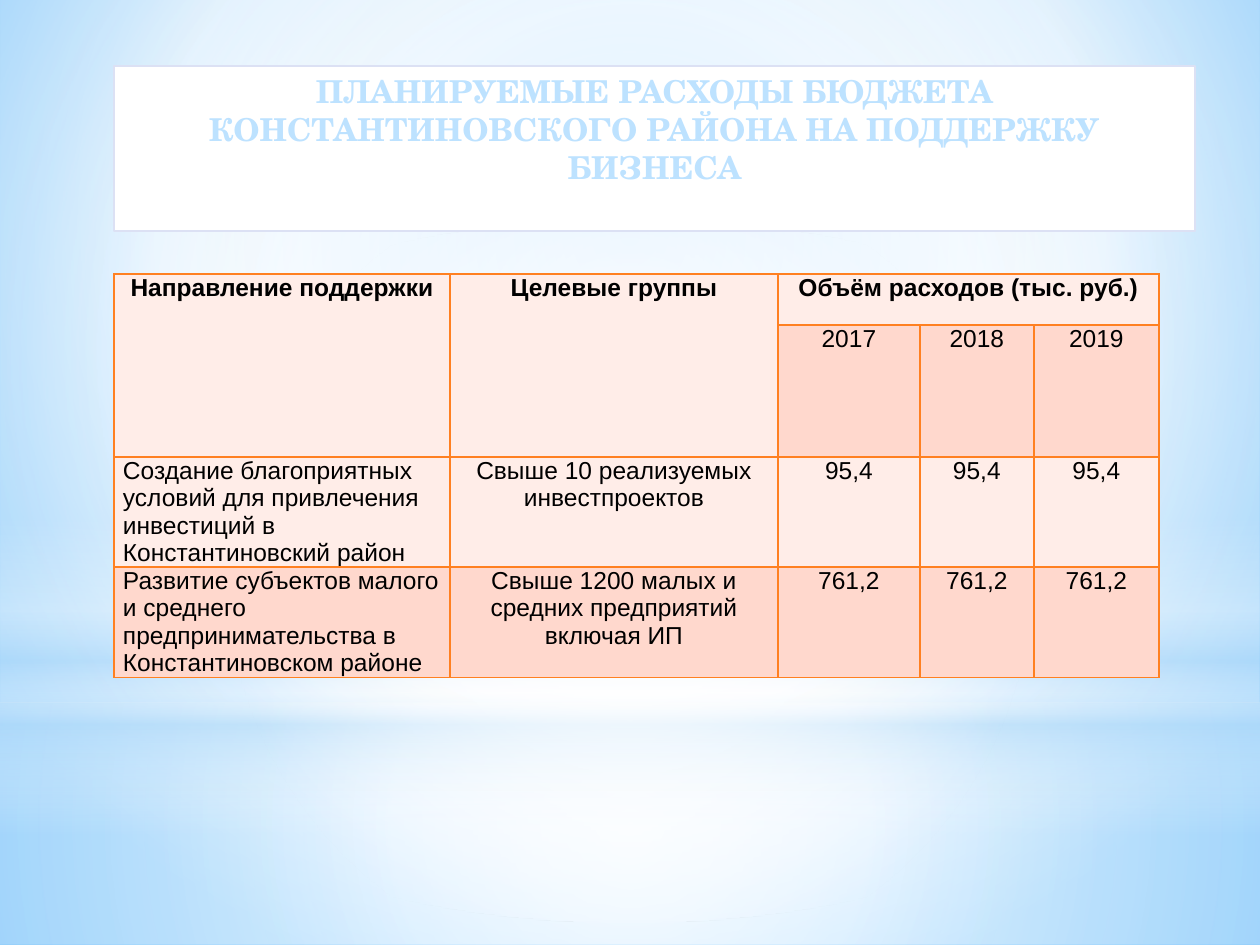
import pptx
import pptx.util
import pptx.dml.color
import pptx.enum.shapes
import pptx.enum.text
import pptx.oxml
import pptx.oxml.ns

RGB = pptx.dml.color.RGBColor
SHAPE = pptx.enum.shapes.MSO_SHAPE
ALIGN = pptx.enum.text.PP_ALIGN
qn = pptx.oxml.ns.qn
NS = pptx.oxml.ns.nsdecls("a")

PX = 914400 // 126

WHITE = RGB(0xFF, 0xFF, 0xFF)
BLACK = RGB(0x00, 0x00, 0x00)
SKY = RGB(0x9E, 0xD5, 0xFF)
DEEP_SKY = RGB(0x5B, 0xB9, 0xFF)
MIST = RGB(0xB4, 0xDC, 0xFA)
TITLE_BLUE = RGB(0xBD, 0xE2, 0xFF)
TITLE_OUTLINE = RGB(0x17, 0x20, 0x4F)
TITLE_FRAME = RGB(0xDC, 0xE1, 0xF4)
ORANGE = RGB(0xFF, 0x80, 0x21)
PALE_PINK = RGB(0xFF, 0xED, 0xE8)
PINK = RGB(0xFF, 0xD8, 0xCD)

CENTRE = (50, 50, 50, 50)
# Soft light layers: shape, box, stops (position, colour, opacity), focus or None
LAYERS = [
    (SHAPE.RECTANGLE, (0, 703, 1260, 242),
     [(0, WHITE, 91), (37, WHITE, 76), (100, MIST, 79)], CENTRE),
    (SHAPE.RECTANGLE, (0, 0, 1260, 703),
     [(0, WHITE, 89), (48, WHITE, 62), (100, MIST, 79)], CENTRE),
    (SHAPE.RECTANGLE, (0, 519, 1260, 315),
     [(0, WHITE, 0), (29, WHITE, 30), (45, MIST, 40), (55, WHITE, 26),
      (65, MIST, 60), (100, WHITE, 0)], None),
    (SHAPE.OVAL, (0, 220, 1260, 703),
     [(0, WHITE, 100), (56, WHITE, 0)], CENTRE),
]

TITLE = ("ПЛАНИРУЕМЫЕ РАСХОДЫ БЮДЖЕТА КОНСТАНТИНОВСКОГО РАЙОНА "
         "НА ПОДДЕРЖКУ БИЗНЕСА")
COLUMNS = [336, 328, 142, 114, 125]
ROW_HEIGHTS = [51, 132, 110, 110]
ROWS = [
    ["Направление поддержки", "Целевые группы", "Объём расходов (тыс. руб.)", "", ""],
    ["", "", "2017", "2018", "2019"],
    ["Создание благоприятных условий для привлечения инвестиций "
     "в Константиновский район",
     "Свыше 10 реализуемых инвестпроектов", "95,4", "95,4", "95,4"],
    ["Развитие субъектов малого и среднего предпринимательства "
     "в Константиновском районе",
     "Свыше 1200 малых и средних предприятий включая ИП",
     "761,2", "761,2", "761,2"],
]
MERGES = [((0, 0), (1, 0)), ((0, 1), (1, 1)), ((0, 2), (0, 4))]


def emu(*lengths):
    return [n * PX for n in lengths]


def set_attrs(target, values):
    for name, value in values.items():
        setattr(target, name, value)


def write(p, text, size, name, color, bold):
    r = p.add_run()
    r.text = text
    set_attrs(r.font, {"size": pptx.util.Pt(size), "name": name, "bold": bold})
    r.font.color.rgb = color
    return r


def line_xml(tag, color, width):
    return pptx.oxml.parse_xml(
        f'<a:{tag} {NS} w="{pptx.util.Pt(width)}"><a:solidFill>'
        f'<a:srgbClr val="{color}"/></a:solidFill></a:{tag}>')


def set_gradient(fill, properties, stops, focus):
    """Radial around the focus rectangle, or top to bottom without one."""
    fill.solid()
    gs = "".join(
        f'<a:gs pos="{pos * 1000}"><a:srgbClr val="{color}">'
        f'<a:alpha val="{opacity * 1000}"/></a:srgbClr></a:gs>'
        for pos, color, opacity in stops)
    if focus:
        sides = " ".join(f'{k}="{v * 1000}"' for k, v in zip("ltrb", focus))
        course = f'<a:path path="circle"><a:fillToRect {sides}/></a:path>'
    else:
        course = '<a:lin ang="5400000" scaled="0"/>'
    grad = pptx.oxml.parse_xml(
        f'<a:gradFill {NS} rotWithShape="1"><a:gsLst>{gs}</a:gsLst>{course}</a:gradFill>')
    properties.replace(properties.find(qn("a:solidFill")), grad)


def add_layer(s, kind, box, stops, focus):
    sp = s.shapes.add_shape(kind, *emu(*box))
    sp.shadow.inherit = False
    sp.line.fill.background()
    set_gradient(sp.fill, sp._element.spPr, stops, focus)


def format_cell(cell, text, fill, align, bold):
    set_attrs(cell, {"margin_left": emu(9)[0], "margin_right": emu(9)[0],
                     "margin_top": 0, "margin_bottom": 0})
    cell.fill.solid()
    cell.fill.fore_color.rgb = fill
    tcPr = cell._tc.get_or_add_tcPr()
    for i, side in enumerate(("lnL", "lnR", "lnT", "lnB")):
        tcPr.insert(i, line_xml(side, ORANGE, 1))
    p = cell.text_frame.paragraphs[0]
    p.alignment = align
    if text:
        write(p, text, 14, "Arial", BLACK, bold)


def add_budget_table(s):
    box = emu(114, 274, sum(COLUMNS), sum(ROW_HEIGHTS))
    table = s.shapes.add_table(len(ROWS), len(COLUMNS), *box).table
    for column, width in zip(table.columns, emu(*COLUMNS)):
        column.width = width
    for row, height in zip(table.rows, emu(*ROW_HEIGHTS)):
        row.height = height
    for i, texts in enumerate(ROWS):
        for j, text in enumerate(texts):
            fill = PINK if i == 3 or (i == 1 and j > 1) else PALE_PINK
            align = ALIGN.LEFT if i > 1 and j == 0 else ALIGN.CENTER
            format_cell(table.cell(i, j), text, fill, align, i == 0)
    for first, last in MERGES:
        table.cell(*first).merge(table.cell(*last))


def format_title(s):
    sp = s.shapes.title
    set_attrs(sp, dict(zip(("left", "top", "width", "height"),
                           emu(114, 66, 1081, 165))))
    sp.fill.solid()
    sp.fill.fore_color.rgb = WHITE
    sp.line.color.rgb = TITLE_FRAME
    sp.line.width = pptx.util.Pt(1.25)
    tf = sp.text_frame
    set_attrs(tf, {"word_wrap": True,
                   "auto_size": pptx.enum.text.MSO_AUTO_SIZE.NONE,
                   "vertical_anchor": pptx.enum.text.MSO_ANCHOR.TOP})
    p = tf.paragraphs[0]
    p.alignment = ALIGN.CENTER
    r = write(p, TITLE, 18, "TeX Gyre Schola", TITLE_BLUE, True)
    r.font._element.insert(0, line_xml("ln", TITLE_OUTLINE, 1))
    # Bring the title in front of the layers
    s.shapes._spTree.append(sp._element)


def main():
    prs = pptx.Presentation()
    prs.slide_width, prs.slide_height = pptx.util.Inches(10), pptx.util.Inches(7.5)
    s = prs.slides.add_slide(prs.slide_layouts[5])

    # Background and light layers
    fill = s.background.fill
    fill.solid()
    set_gradient(fill, s._element.find(".//" + qn("p:bgPr")),
                 [(0, SKY, 100), (60, WHITE, 100), (100, DEEP_SKY, 100)],
                 (20, 10, 20, 60))
    for layer in LAYERS:
        add_layer(s, *layer)

    # Content
    add_budget_table(s)
    format_title(s)
    prs.save("out.pptx")


if __name__ == "__main__":
    main()
